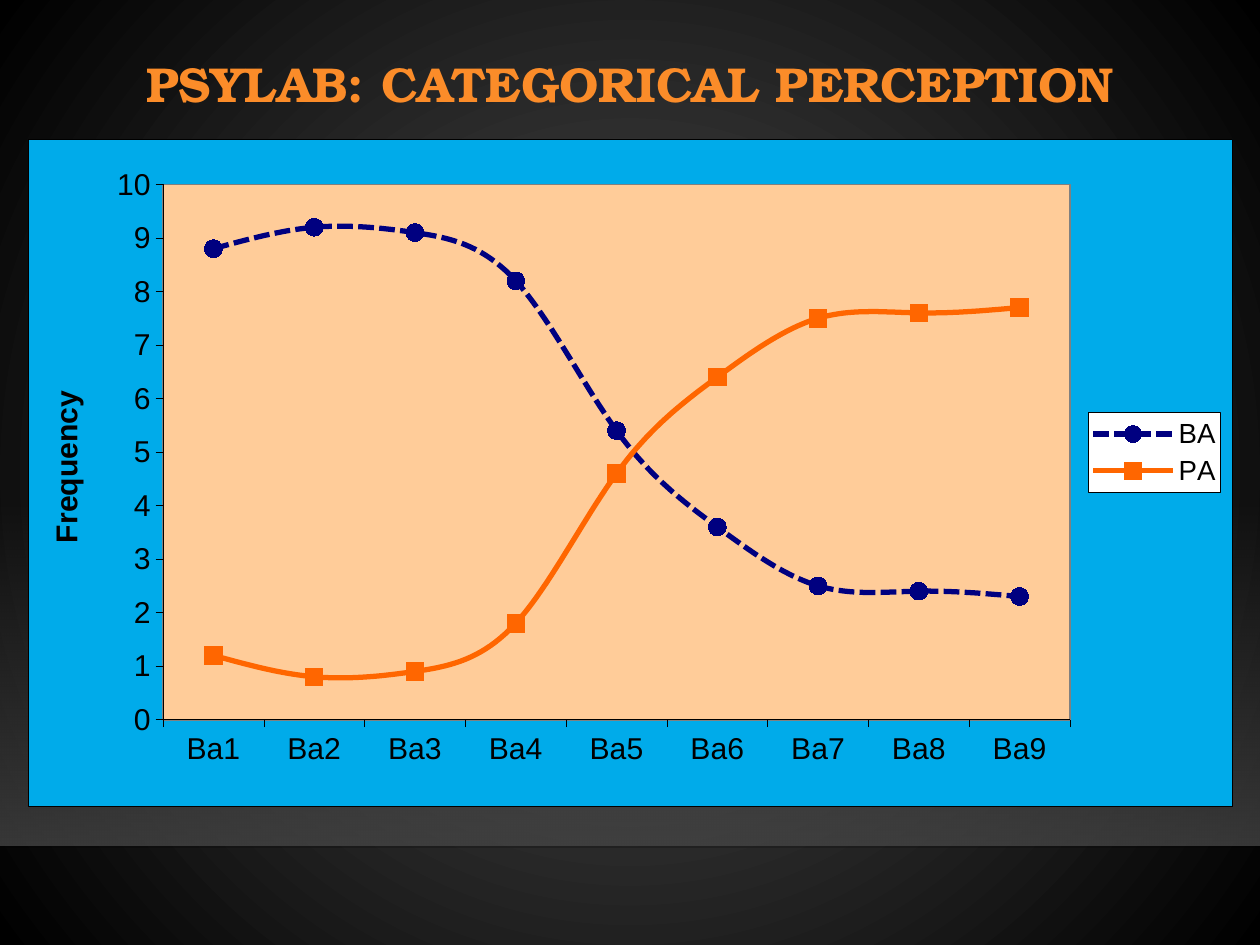
from pptx import Presentation
from pptx.chart.data import CategoryChartData
from pptx.dml.color import RGBColor
from pptx.enum.chart import XL_CHART_TYPE, XL_LEGEND_POSITION, XL_MARKER_STYLE, XL_TICK_MARK
from pptx.enum.dml import MSO_LINE
from pptx.enum.shapes import MSO_CONNECTOR, MSO_SHAPE
from pptx.enum.text import MSO_ANCHOR, PP_ALIGN
from pptx.oxml import parse_xml
from pptx.oxml.ns import nsdecls, qn
from pptx.util import Pt

PX = 914400 / 126
WIDTH, HEIGHT = 1260, 945

BLACK = RGBColor(0x00, 0x00, 0x00)
WHITE = RGBColor(0xFF, 0xFF, 0xFF)
GLOW = RGBColor(0x50, 0x50, 0x50)
FLOOR = RGBColor(0x45, 0x45, 0x45)
TITLE = RGBColor(0xFB, 0x8C, 0x29)
SKY = RGBColor(0x00, 0xAB, 0xEA)
PEACH = RGBColor(0xFF, 0xCC, 0x99)
GRAY = RGBColor(0x80, 0x80, 0x80)
NAVY = RGBColor(0x00, 0x00, 0x80)
MARKER_NAVY = RGBColor(0x00, 0x00, 0x90)
ORANGE = RGBColor(0xFF, 0x66, 0x00)

LINE_MARKERS = XL_CHART_TYPE.LINE_MARKERS
RIGHT = XL_LEGEND_POSITION.RIGHT
CIRCLE, SQUARE = XL_MARKER_STYLE.CIRCLE, XL_MARKER_STYLE.SQUARE
OUTSIDE, NO_TICK = XL_TICK_MARK.OUTSIDE, XL_TICK_MARK.NONE
SOLID, DASH = MSO_LINE.SOLID, MSO_LINE.SQUARE_DOT
STRAIGHT = MSO_CONNECTOR.STRAIGHT
RECTANGLE = MSO_SHAPE.RECTANGLE
MIDDLE, CENTER = MSO_ANCHOR.MIDDLE, PP_ALIGN.CENTER

CATEGORIES = [f"Ba{i}" for i in range(1, 10)]
# name, values, line colour, dash, marker, marker colour
SERIES = [
    ("BA", (8.8, 9.2, 9.1, 8.2, 5.4, 3.6, 2.5, 2.4, 2.3), NAVY, DASH, CIRCLE, MARKER_NAVY),
    ("PA", (1.2, 0.8, 0.9, 1.8, 4.6, 6.4, 7.5, 7.6, 7.7), ORANGE, SOLID, SQUARE, ORANGE),
]


def px(n):
    return round(n * PX)


def set_alpha(element, *percents):
    for color, percent in zip(element.iter(qn("a:srgbClr")), percents):
        color.append(parse_xml(f'<a:alpha {nsdecls("a")} val="{percent * 1000}"/>'))


def set_gradient(fill, element, colors, shade):
    """Fill with two colours; shade is the XML for the direction."""
    fill.gradient()
    for stop, color, position in zip(fill.gradient_stops, colors, (0, 1)):
        stop.color.rgb = color
        stop.position = position
    grad = next(element.iter(qn("a:gradFill")))
    grad.replace(grad.find(qn("a:lin")), parse_xml(shade))


def box_format(fill, line, points):
    return parse_xml(
        f'<c:spPr {nsdecls("c", "a")}><a:solidFill><a:srgbClr val="{fill}"/></a:solidFill>'
        f'<a:ln w="{Pt(points)}"><a:solidFill><a:srgbClr val="{line}"/></a:solidFill></a:ln></c:spPr>')


def manual_layout(x, y, w, h, inner=False):
    target = '<c:layoutTarget val="inner"/>' if inner else ""
    return parse_xml(
        f'<c:layout {nsdecls("c")}><c:manualLayout>{target}'
        '<c:xMode val="edge"/><c:yMode val="edge"/>'
        f'<c:x val="{x}"/><c:y val="{y}"/><c:w val="{w}"/><c:h val="{h}"/>'
        '</c:manualLayout></c:layout>')


def set_layout(parent, index, layout):
    for old in parent.findall(qn("c:layout")):
        parent.remove(old)
    parent.insert(index, layout)


class Deck:
    title_font, chart_font = "TeX Gyre Bonum", "Arial"
    title_size, axis_size, legend_size = 28, 17.2, 15.8

    def __init__(self):
        self.prs = Presentation()
        self.prs.slide_width, self.prs.slide_height = px(WIDTH), px(HEIGHT)
        self.slide = self.prs.slides.add_slide(self.prs.slide_layouts[6])

    def style(self, font, name, size, color, bold=False):
        font.name, font.size, font.bold = name, Pt(size), bold
        font.color.rgb = color

    def background(self, inner, outer):
        set_gradient(
            self.slide.background.fill, self.slide.element, (inner, outer),
            f'<a:path {nsdecls("a")} path="circle">'
            '<a:fillToRect l="50000" t="50000" r="50000" b="50000"/></a:path>')

    def fade(self, x, y, w, h, color, top, bottom):
        sp = self.slide.shapes.add_shape(RECTANGLE, px(x), px(y), px(w), px(h))
        sp.shadow.inherit = False
        sp.line.fill.background()
        set_gradient(sp.fill, sp.element, (color, color),
                     f'<a:lin {nsdecls("a")} ang="5400000" scaled="0"/>')
        set_alpha(sp.element, top, bottom)

    def line(self, x1, y1, x2, y2, color, points, alpha):
        sp = self.slide.shapes.add_connector(STRAIGHT, px(x1), px(y1), px(x2), px(y2))
        sp.line.color.rgb, sp.line.width = color, Pt(points)
        set_alpha(sp.element, alpha)
        sp.element.spPr.append(parse_xml(f'<a:effectLst {nsdecls("a")}/>'))

    def title(self, x, y, w, h, text):
        tf = self.slide.shapes.add_textbox(px(x), px(y), px(w), px(h)).text_frame
        tf.word_wrap, tf.vertical_anchor = True, MIDDLE
        p = tf.paragraphs[0]
        p.text, p.alignment, p.line_spacing = text, CENTER, 0.9
        self.style(p.runs[0].font, self.title_font, self.title_size, TITLE, True)

    def line_chart(self, x, y, w, h, categories, series, value_title):
        data = CategoryChartData()
        data.categories = categories
        for name, values, *_ in series:
            data.add_series(name, values)
        chart = self.slide.shapes.add_chart(
            LINE_MARKERS, px(x), px(y), px(w), px(h), data).chart
        chart.has_title = False
        self.style(chart.font, self.chart_font, self.axis_size, BLACK)

        # Series
        plot = chart.plots[0]
        plot.vary_by_categories = False
        for s, (_, _, color, dash, marker, marker_color) in zip(plot.series, series):
            s.smooth = True
            s.format.line.color.rgb, s.format.line.width = color, Pt(3)
            s.format.line.dash_style = dash
            s.marker.style, s.marker.size = marker, 10
            s.marker.format.fill.solid()
            s.marker.format.fill.fore_color.rgb = marker_color
            s.marker.format.line.color.rgb = color

        # Axes
        for axis in (chart.category_axis, chart.value_axis):
            axis.has_major_gridlines = False
            axis.major_tick_mark, axis.minor_tick_mark = OUTSIDE, NO_TICK
            axis.format.line.color.rgb, axis.format.line.width = BLACK, Pt(0.25)
            self.style(axis.tick_labels.font, self.chart_font, self.axis_size, BLACK)
        axis = chart.value_axis
        axis.minimum_scale, axis.maximum_scale, axis.major_unit = 0, 10, 1
        axis.tick_labels.number_format = "General"
        axis.tick_labels.number_format_is_linked = False
        tf = axis.axis_title.text_frame
        tf.text = value_title
        self.style(tf.paragraphs[0].runs[0].font, self.chart_font, self.axis_size, BLACK, True)
        chart.element.xpath(".//c:valAx/c:title//a:bodyPr")[0].set("rot", "-5400000")

        # Legend
        chart.has_legend = True
        chart.legend.position, chart.legend.include_in_layout = RIGHT, False
        self.style(chart.legend.font, self.chart_font, self.legend_size, BLACK)
        legend = chart.element.xpath(".//c:legend")[0]
        set_layout(legend, 1, manual_layout(0.88, 0.41, 0.11, 0.12))
        legend.find(qn("c:overlay")).addnext(box_format(WHITE, BLACK, 0.25))

        # Chart and plot areas
        area = chart.element.xpath(".//c:plotArea")[0]
        set_layout(area, 0, manual_layout(0.112, 0.068, 0.753, 0.803, inner=True))
        area.append(box_format(PEACH, GRAY, 1))
        chart.element.find(qn("c:chart")).addnext(box_format(SKY, BLACK, 0.25))


def main():
    deck = Deck()

    # Backdrop
    deck.background(GLOW, BLACK)
    deck.fade(0, 499, WIDTH, 347, FLOOR, 0, 80)
    deck.line(0, 847, WIDTH, 847, BLACK, 1, 20)

    # Content
    deck.title(63, 38, 1134, 98, "PSYLAB: CATEGORICAL PERCEPTION")
    deck.line_chart(28, 139, 1205, 667, CATEGORIES, SERIES, "Frequency")

    deck.prs.save("out.pptx")


if __name__ == "__main__":
    main()
